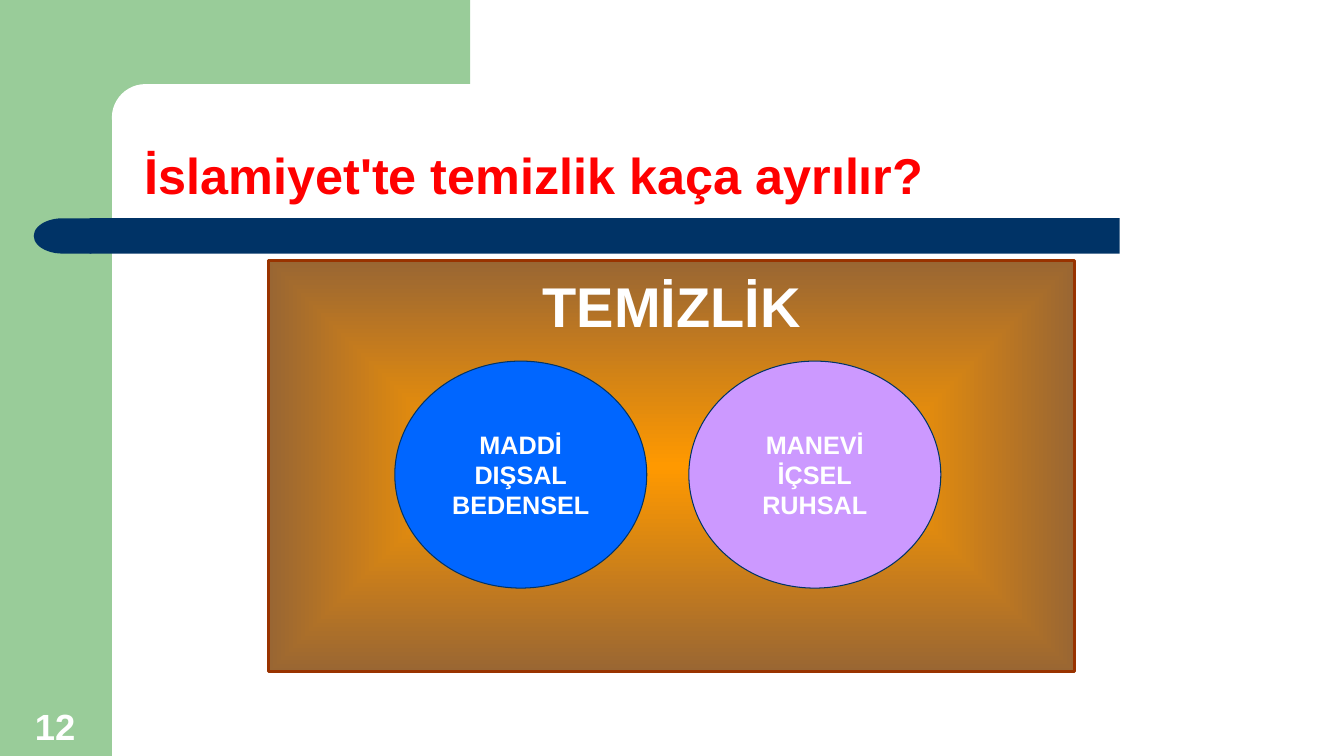
from dataclasses import dataclass

from lxml.etree import SubElement
from pptx import Presentation
from pptx.dml.color import RGBColor
from pptx.enum.shapes import MSO_SHAPE
from pptx.enum.text import MSO_ANCHOR, MSO_AUTO_SIZE, PP_ALIGN
from pptx.oxml.ns import qn
from pptx.util import Cm, Pt

TITLE = "İslamiyet'te temizlik kaça ayrılır?"
PANEL_HEADING = "TEMİZLİK"
SLIDE_NUMBER = "12"
CLEANLINESS_KINDS = [
    {"fill": "0066FF", "lines": ["MADDİ", "DIŞSAL", "BEDENSEL"]},
    {"fill": "CC99FF", "lines": ["MANEVİ", "İÇSEL", "RUHSAL"]},
]


@dataclass(frozen=True)
class Theme:
    font: str = "Arial"
    green: str = "99CC99"
    navy: str = "003366"
    white: str = "FFFFFF"
    red: str = "FF0000"
    panel_center: str = "FF9900"
    panel_edge: str = "996633"
    panel_line: str = "993300"
    title_size: int = 36
    heading_size: int = 40
    circle_size: int = 18
    number_size: int = 26


THEME = Theme()

# Boxes are left, top, width, height in centimetres.
SLIDE_WIDTH, SLIDE_HEIGHT = 33.87, 19.05
SIDEBAR_WIDTH = 2.82
BAR_TOP, BAR_HEIGHT = 5.5, 0.89
DECORATION = [
    (MSO_SHAPE.RECTANGLE, (0, 0, SIDEBAR_WIDTH, SLIDE_HEIGHT), THEME.green, 0),
    (MSO_SHAPE.RECTANGLE, (2.54, 0, 9.31, 2.96), THEME.green, 0),
    (MSO_SHAPE.ROUNDED_RECTANGLE, (SIDEBAR_WIDTH, 2.12, 18.9, 1.69), THEME.white, 0),
    (MSO_SHAPE.RECTANGLE, (2.26, BAR_TOP, 25.96, BAR_HEIGHT), THEME.navy, 0),
    (MSO_SHAPE.FLOWCHART_DELAY, (0.85, BAR_TOP, 1.45, BAR_HEIGHT), THEME.navy, 180),
]
TITLE_BOX = (3.39, 2.12, 29.63, 3.18)
PANEL_BOX = (6.77, 6.56, 20.32, 10.37)
NUMBER_BOX = (0.3, 17.63, 2.18, 1.35)
CIRCLE_LEFT, CIRCLE_TOP, CIRCLE_WIDTH, CIRCLE_HEIGHT = 9.95, 9.1, 6.35, 5.72
CIRCLE_GAP = 1.06


def color(value):
    return RGBColor.from_string(value)


def lengths(box):
    return [Cm(value) for value in box]


def place(shape, box):
    shape.left, shape.top, shape.width, shape.height = lengths(box)


def write(shape, lines, size, text_color, alignment, anchor, wrap=True):
    frame = shape.text_frame
    frame.text = "\n".join(lines)
    frame.word_wrap = wrap
    frame.auto_size = MSO_AUTO_SIZE.NONE
    frame.vertical_anchor = anchor
    for paragraph in frame.paragraphs:
        paragraph.alignment = alignment
        paragraph.space_before = Pt(0)
        font = paragraph.font
        font.name, font.size, font.bold = THEME.font, Pt(size), True
        font.color.rgb = color(text_color)


def add_filled(slide, kind, box, fill):
    shape = slide.shapes.add_shape(kind, *lengths(box))
    shape.shadow.inherit = False
    shape.fill.solid()
    shape.fill.fore_color.rgb = color(fill)
    shape.line.fill.background()
    return shape


def fill_from_center(shape, center, edge):
    """Give the shape a rectangular gradient that starts in its middle."""
    shape.fill.gradient()
    for stop, value in zip(shape.fill.gradient_stops, (center, edge)):
        stop.color.rgb = color(value)
    gradient = shape._element.spPr.find(qn("a:gradFill"))
    gradient.remove(gradient.find(qn("a:lin")))
    shade = SubElement(gradient, qn("a:path"), {"path": "rect"})
    SubElement(shade, qn("a:fillToRect"), {side: "50000" for side in "ltrb"})


def add_decoration(slide):
    for kind, box, fill, rotation in DECORATION:
        shape = add_filled(slide, kind, box, fill)
        shape.rotation = rotation
        if kind == MSO_SHAPE.ROUNDED_RECTANGLE:
            shape.adjustments[0] = 0.5
    number = slide.shapes.add_textbox(*lengths(NUMBER_BOX))
    write(number, [SLIDE_NUMBER], THEME.number_size, THEME.white,
          PP_ALIGN.CENTER, MSO_ANCHOR.BOTTOM)


def format_panel(panel):
    place(panel, PANEL_BOX)
    fill_from_center(panel, THEME.panel_center, THEME.panel_edge)
    panel.line.color.rgb = color(THEME.panel_line)
    panel.line.width = Pt(2.25)
    write(panel, [PANEL_HEADING], THEME.heading_size, THEME.white,
          PP_ALIGN.CENTER, MSO_ANCHOR.TOP)
    panel.text_frame.margin_top = Cm(0.27)
    properties = panel.text_frame.paragraphs[0]._p.get_or_add_pPr()
    properties.set("marL", "0")
    properties.set("indent", "0")
    bullet_none = properties.makeelement(qn("a:buNone"), {})
    properties.find(qn("a:defRPr")).addprevious(bullet_none)


def format_title(title):
    place(title, TITLE_BOX)
    write(title, [TITLE], THEME.title_size, THEME.red, PP_ALIGN.LEFT, MSO_ANCHOR.BOTTOM)
    title.text_frame.paragraphs[0].line_spacing = 0.9


def add_circles(slide):
    for index, kind in enumerate(CLEANLINESS_KINDS):
        left = CIRCLE_LEFT + index * (CIRCLE_WIDTH + CIRCLE_GAP)
        circle = add_filled(slide, MSO_SHAPE.OVAL,
                            (left, CIRCLE_TOP, CIRCLE_WIDTH, CIRCLE_HEIGHT), kind["fill"])
        circle.line.color.rgb = color(THEME.navy)
        circle.line.width = Pt(0.75)
        write(circle, kind["lines"], THEME.circle_size, THEME.white,
              PP_ALIGN.CENTER, MSO_ANCHOR.MIDDLE, wrap=False)


def main():
    presentation = Presentation()
    presentation.slide_width, presentation.slide_height = Cm(SLIDE_WIDTH), Cm(SLIDE_HEIGHT)
    slide = presentation.slides.add_slide(presentation.slide_layouts[1])
    title, panel = slide.shapes.title, slide.placeholders[1]

    add_decoration(slide)
    format_panel(panel)
    format_title(title)
    # Bring the placeholders in front of the decoration.
    for placeholder in (panel, title):
        slide.shapes._spTree.append(placeholder._element)
    add_circles(slide)

    presentation.save("out.pptx")


if __name__ == "__main__":
    main()
